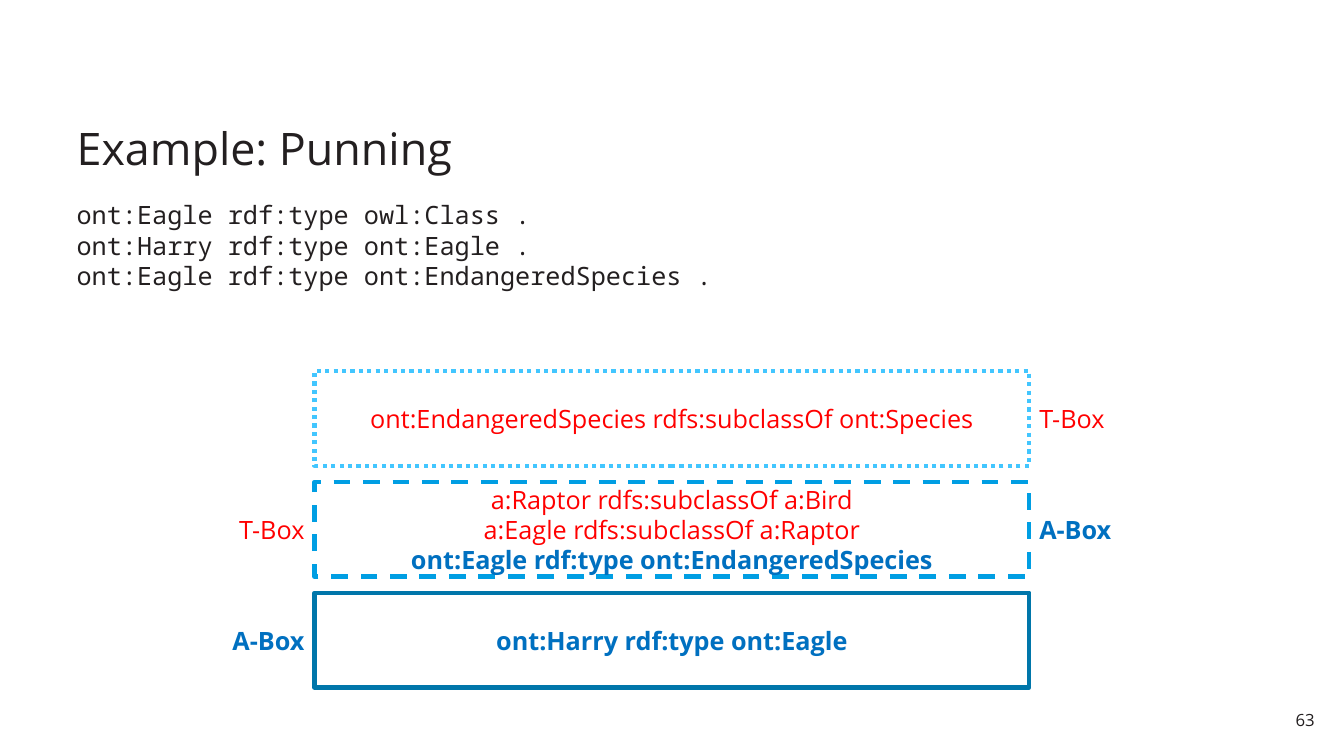
import dataclasses
import typing

import pptx
import pptx.dml.color
import pptx.enum.dml
import pptx.enum.shapes
import pptx.enum.text
import pptx.util

ALIGN = pptx.enum.text.PP_ALIGN
ANCHOR = pptx.enum.text.MSO_ANCHOR
DASH = pptx.enum.dml.MSO_LINE
SANS, MONO = "Open Sans", "Noto Sans Mono"
INK, TERM, FACT = "231F20", "FF0000", "0070C0"

SLIDE_W, SLIDE_H = pptx.util.Inches(13.33), pptx.util.Inches(7.5)
LAYER_X, LAYER_W, LAYER_H = 23.4, 53.19, 12.53
LAYER_TOP, LAYER_PITCH = 49.07, 14.67
LABEL_W, LABEL_H = 11.78, 5.33


class Area(typing.NamedTuple):
    x: float
    y: float
    w: float
    h: float

    def emu(self) -> list[int]:
        sides = (SLIDE_W, SLIDE_H, SLIDE_W, SLIDE_H)
        return [round(share * side / 100) for share, side in zip(self, sides)]


@dataclasses.dataclass
class Line:
    text: str
    color: str = INK
    bold: bool = False
    size: float = 18
    font: str = SANS


@dataclasses.dataclass
class Block:
    area: Area
    line: Line
    frame: dict[str, typing.Any]
    paragraph: dict[str, typing.Any]


@dataclasses.dataclass
class Layer:
    lines: list[Line]
    border: str
    dash: typing.Any
    left: Line | None = None
    right: Line | None = None


def rgb(color: str) -> pptx.dml.color.RGBColor:
    return pptx.dml.color.RGBColor.from_string(color)


def apply(target: typing.Any, values: dict[str, typing.Any]) -> None:
    for name, value in values.items():
        setattr(target, name, value)


def write(tf: typing.Any, lines: list[Line], paragraph: dict[str, typing.Any]) -> None:
    for i, line in enumerate(lines):
        p = tf.paragraphs[0] if i == 0 else tf.add_paragraph()
        apply(p, paragraph)
        p.text = line.text
        for r in p.runs:
            apply(r.font, {"name": line.font, "size": pptx.util.Pt(line.size), "bold": line.bold})
            r.font.color.rgb = rgb(line.color)


def add_block(s: typing.Any, block: Block) -> None:
    tf = s.shapes.add_textbox(*block.area.emu()).text_frame
    apply(tf, {"word_wrap": True, **block.frame})
    write(tf, [block.line], block.paragraph)


def add_label(s: typing.Any, line: Line, x: float, layer_y: float, align: typing.Any) -> None:
    area = Area(x, layer_y + (LAYER_H - LABEL_H) / 2, LABEL_W, LABEL_H)
    frame = {"auto_size": pptx.enum.text.MSO_AUTO_SIZE.SHAPE_TO_FIT_TEXT}
    add_block(s, Block(area, line, frame, {"alignment": align}))


def add_layer(s: typing.Any, layer: Layer, y: float) -> None:
    area = Area(LAYER_X, y, LAYER_W, LAYER_H)
    sp = s.shapes.add_shape(pptx.enum.shapes.MSO_SHAPE.RECTANGLE, *area.emu())
    sp.shadow.inherit = False
    sp.fill.background()
    sp.line.color.rgb = rgb(layer.border)
    apply(sp.line, {"width": pptx.util.Pt(3), "dash_style": layer.dash})
    apply(sp.text_frame, {"word_wrap": True, "vertical_anchor": ANCHOR.MIDDLE})
    write(sp.text_frame, layer.lines, {"alignment": ALIGN.CENTER})
    if layer.left:
        add_label(s, layer.left, LAYER_X - LABEL_W, y, ALIGN.RIGHT)
    if layer.right:
        add_label(s, layer.right, LAYER_X + LAYER_W, y, ALIGN.LEFT)


def insets(x: float, y: float) -> dict[str, typing.Any]:
    across, down = pptx.util.Inches(x), pptx.util.Inches(y)
    return {"margin_left": across, "margin_right": across, "margin_top": down, "margin_bottom": down}


T_BOX = Line("T-Box", TERM)
A_BOX = Line("A-Box", FACT, True)

TRIPLES = "\v".join([
    "ont:Eagle rdf:type owl:Class .",
    "ont:Harry rdf:type ont:Eagle .",
    "ont:Eagle rdf:type ont:EndangeredSpecies .",
])

BLOCKS = [
    Block(Area(5.1, 10.13, 89.8, 13.6), Line("Example: Punning", size=32),
          {**insets(0.08, 0.04), "vertical_anchor": ANCHOR.BOTTOM}, {"line_spacing": 0.9}),
    Block(Area(5.1, 25.87, 89.8, 65.07), Line(TRIPLES, font=MONO), insets(0.08, 0.04), {}),
    Block(Area(94.9, 93.07, 3.53, 4.13), Line("63", size=12),
          insets(0.08, 0.06), {"alignment": ALIGN.RIGHT}),
]

LAYERS = [
    Layer([Line("ont:EndangeredSpecies rdfs:subclassOf ont:Species", TERM)],
          "42C6FF", DASH.ROUND_DOT, right=T_BOX),
    Layer([Line("a:Raptor rdfs:subclassOf a:Bird", TERM),
           Line("a:Eagle rdfs:subclassOf a:Raptor", TERM),
           Line("ont:Eagle rdf:type ont:EndangeredSpecies", FACT, True)],
          "009EE3", DASH.DASH, left=T_BOX, right=A_BOX),
    Layer([Line("ont:Harry rdf:type ont:Eagle", FACT, True)],
          "0076AA", DASH.SOLID, left=A_BOX),
]


def main() -> None:
    prs = pptx.Presentation()
    apply(prs, {"slide_width": SLIDE_W, "slide_height": SLIDE_H})
    s = prs.slides.add_slide(prs.slide_layouts[6])
    for block in BLOCKS:
        add_block(s, block)
    for i, layer in enumerate(LAYERS):
        add_layer(s, layer, LAYER_TOP + i * LAYER_PITCH)
    prs.save("out.pptx")


if __name__ == "__main__":
    main()
